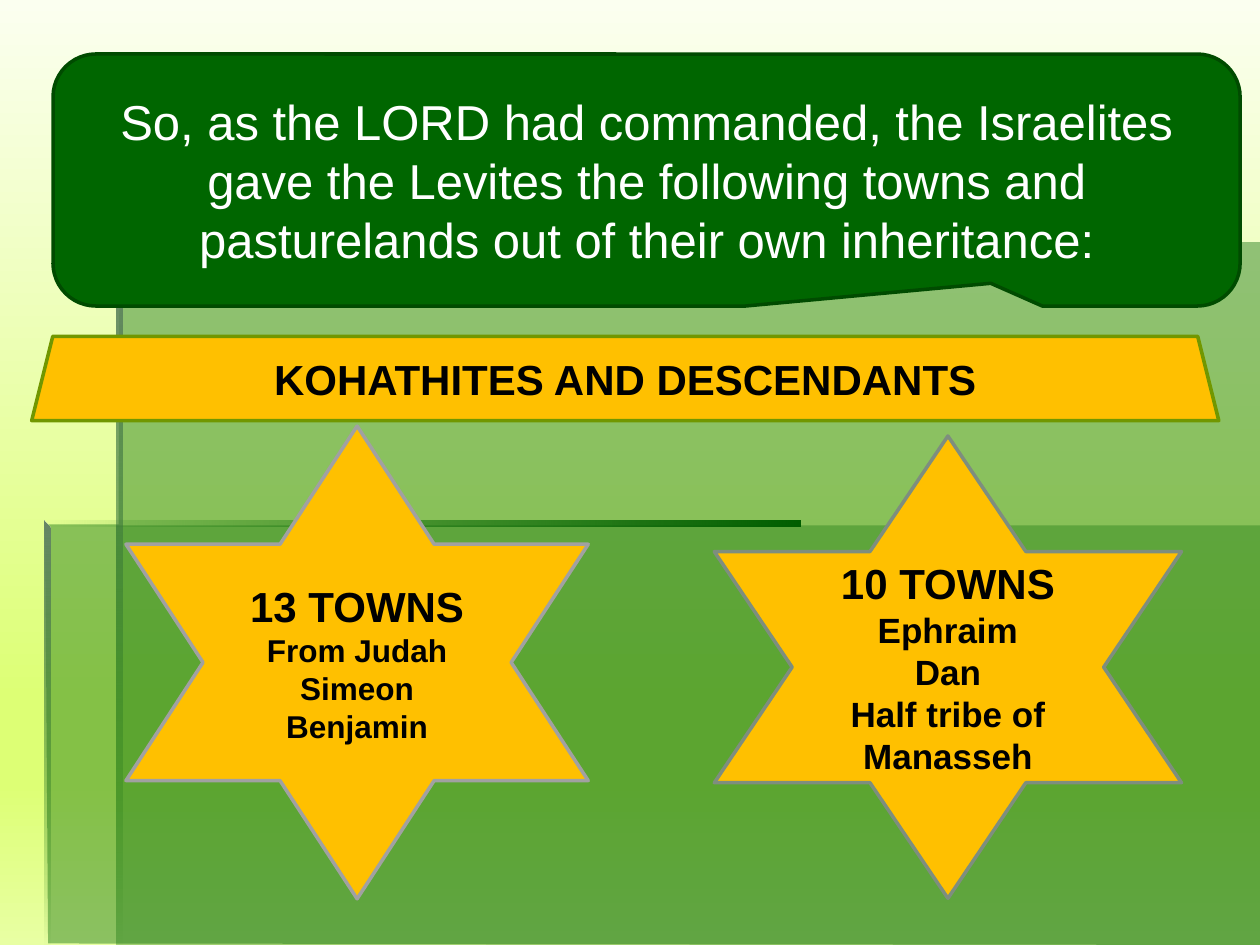
from lxml.etree import SubElement
from pptx import Presentation
from pptx.dml.color import RGBColor
from pptx.enum.shapes import MSO_SHAPE
from pptx.enum.text import MSO_ANCHOR, PP_ALIGN
from pptx.oxml.ns import qn
from pptx.util import Cm, Pt

HUES = {
    "green": "006600", "deep": "005E00", "moss": "668666", "edge": "004B00",
    "gold": "FFC000", "olive": "719700", "gray": "A1A1A1", "sage": "7E8E7E",
    "black": "000000", "white": "FFFFFF",
    "cream": "FBFFF0", "lime": "DDFF75", "pale": "E8FFA3",
}


def tint(name):
    return RGBColor.from_string(HUES[name])


def add_alpha(node, part):
    SubElement(node, qn("a:alpha"), val=str(part * 1000))


def blend(fill, root, stops, angle):
    fill.background()
    old = next(root.iter(qn("a:noFill")))
    host = old.getparent()
    grad = SubElement(host, qn("a:gradFill"), rotWithShape="1")
    host.replace(old, grad)
    group = SubElement(grad, qn("a:gsLst"))
    for place, name, part in stops:
        stop = SubElement(group, qn("a:gs"), pos=str(place * 1000))
        hue = SubElement(stop, qn("a:srgbClr"), val=HUES[name])
        if part < 100:
            add_alpha(hue, part)
    SubElement(grad, qn("a:lin"), ang=str(angle * 60000), scaled="0")


def outline(slide, left, top, points):
    spots = [(Cm(left + x), Cm(top + y)) for x, y in points]
    maker = slide.shapes.build_freeform(*spots[0])
    maker.add_line_segments(spots[1:], close=True)
    shape = maker.convert_to_shape()
    shape.shadow.inherit = False
    shape.line.fill.background()
    return shape


def add_back(slide, left, top, width, height):
    step, drop, rise, thick = 1.45, 5.71, 5.61, 0.13
    panels = [
        (40, [(1.52, 0), (1.5, 5.69), (0.02, 5.69), (0.08, height - 0.03),
              (width, height), (width, 0)]),
        (30, [(step, drop), (step, height), (width, height), (width, drop)]),
    ]
    for part, points in panels:
        panel = outline(slide, left, top, points)
        panel.fill.solid()
        panel.fill.fore_color.rgb = tint("green")
        add_alpha(next(panel.element.iter(qn("a:srgbClr"))), part)

    across = [(0, "green", 0), (100, "deep", 100)]
    down = [(0, "moss", 100), (100, "green", 0)]
    for x, y, size in [(0, rise, 15.24), (step, 0, 21.59)]:
        bar = outline(slide, left + x, top + y,
                      [(0, 0), (0, thick), (size, thick), (size, 0)])
        blend(bar.fill, bar.element, across, 0)
    for x, y, size in [(0, rise, 8.64), (step, 0, 14.22)]:
        bar = outline(slide, left + x, top + y,
                      [(0, 0), (0, size), (thick, size), (thick, 0.16)])
        blend(bar.fill, bar.element, down, 90)


def add_block(slide, kind, box, fill, edge, lines, hue="black", bold=True):
    shape = slide.shapes.add_shape(kind, *map(Cm, box))
    shape.shadow.inherit = False
    shape.fill.solid()
    shape.fill.fore_color.rgb = tint(fill)
    shape.line.color.rgb = tint(edge)
    shape.line.width = Pt(2)
    frame = shape.text_frame
    for key, value in {"word_wrap": True, "vertical_anchor": MSO_ANCHOR.MIDDLE}.items():
        setattr(frame, key, value)
    for index, line in enumerate(lines):
        para = frame.add_paragraph() if index else frame.paragraphs[0]
        para.alignment = PP_ALIGN.CENTER
        for text, size in line:
            run = para.add_run()
            run.text = text
            run.font.color.rgb = tint(hue)
            look = {"name": "Arial", "size": Pt(size), "bold": bold}
            for key, value in look.items():
                setattr(run.font, key, value)
    return shape


def add_verse(slide, *box):
    text = ("So, as the LORD had commanded, the Israelites gave the Levites "
            "the following towns and pasturelands out of their own inheritance:")
    shape = add_block(slide, MSO_SHAPE.ROUNDED_RECTANGULAR_CALLOUT, box,
                      "green", "edge", [[(text, 28)]], "white", False)
    for index, value in enumerate([0.29, 0.41, 0.17]):
        shape.adjustments[index] = value


def add_title(slide, *box):
    add_block(slide, MSO_SHAPE.TRAPEZOID, box, "gold", "olive",
              [[("KOHATHITES AND DESCENDANTS", 24)]])


def add_star(slide, box, edge, head, size, names):
    first, *rest = names
    lines = [[(head + " ", 24), (first, size)]] + [[(name, size)] for name in rest]
    add_block(slide, MSO_SHAPE.STAR_6_POINT, box, "gold", edge, lines)


def main():
    deck = Presentation()
    deck.slide_width, deck.slide_height = Cm(25.4), Cm(19.05)
    slide = deck.slides.add_slide(deck.slide_layouts[6])
    sky = [(0, "cream", 100), (74, "lime", 100), (83, "lime", 100), (100, "pale", 100)]
    blend(slide.background.fill, slide.element, sky, 90)
    add_back(slide, 0.89, 4.88, 24.51, 14.17)
    add_verse(slide, 1.07, 1.09, 23.93, 5.08)
    add_title(slide, 0.64, 6.78, 23.93, 1.7)
    add_star(slide, (2.54, 8.59, 9.32, 9.53), "gray", "13 TOWNS", 18,
             ["From Judah Simeon", "Benjamin"])
    add_star(slide, (14.4, 8.79, 9.42, 9.32), "sage", "10 TOWNS", 20,
             ["Ephraim", "Dan", "Half tribe of Manasseh"])
    deck.save("out.pptx")


if __name__ == "__main__":
    main()
